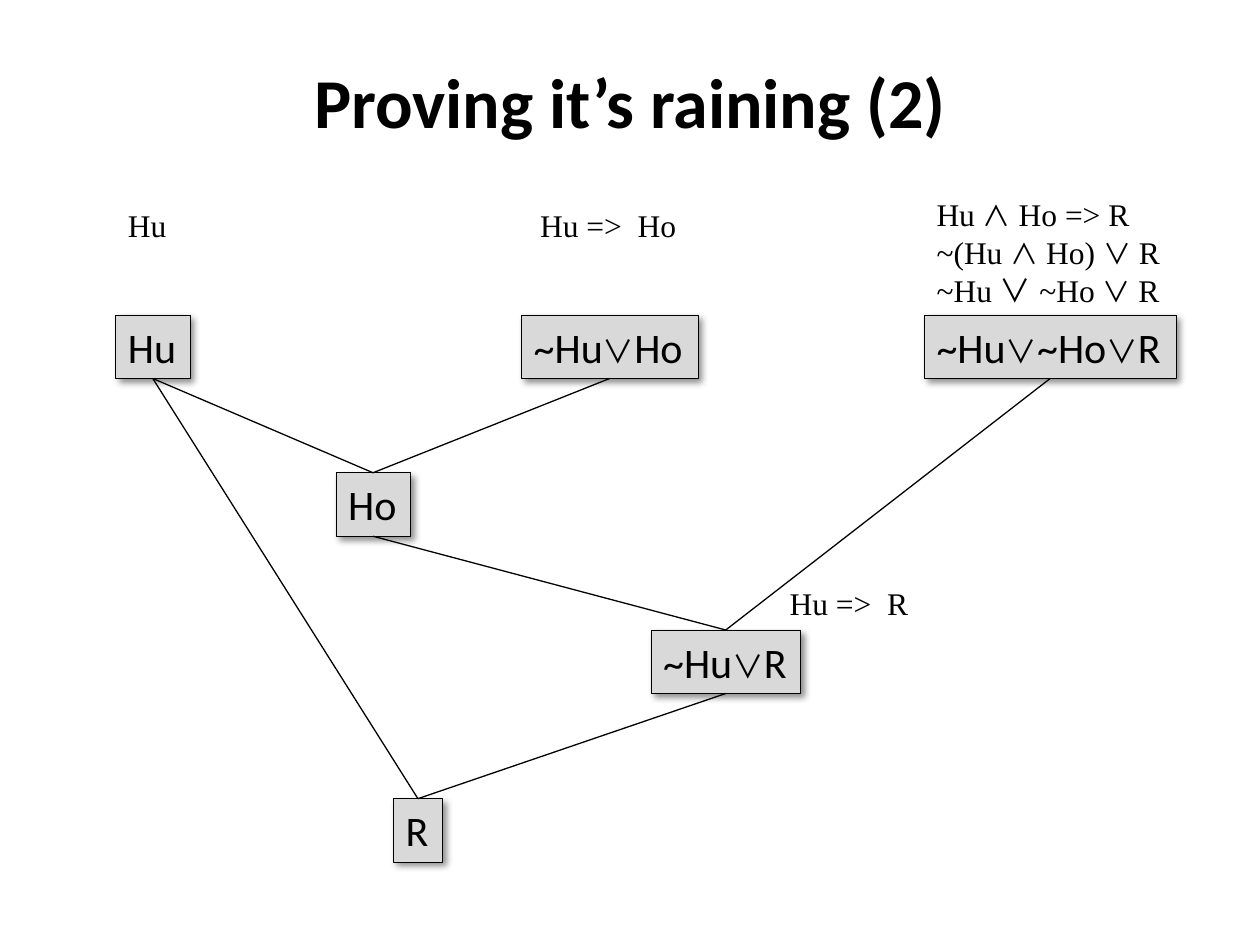
from dataclasses import dataclass
from itertools import groupby

from lxml.etree import SubElement
from pptx import Presentation
from pptx.dml.color import RGBColor
from pptx.enum.shapes import MSO_CONNECTOR as Connector, MSO_SHAPE as Shape
from pptx.enum.text import MSO_ANCHOR as Anchor, MSO_AUTO_SIZE as AutoSize, PP_ALIGN as Align
from pptx.oxml.ns import qn
from pptx.util import Cm, Pt

BLACK, GREY = "000000", "D9D9D9"
SYMBOLS = "∧∨"
SYMBOL_FONT = "Noto Sans CJK JP"
BOX_HEIGHT = 1.28
TOP_SITE, BOTTOM_SITE = 0, 2


@dataclass
class Clause:
    text: str
    left: float
    top: float
    width: float


@dataclass
class Note:
    paragraphs: tuple[str, ...]
    left: float
    top: float
    width: float
    height: float = 1.02
    wrap: bool = False
    symbol_sizes: tuple[int, ...] = ()


CLAUSES = {
    "Hu": Clause("Hu", 2.33, 6.35, 1.5),
    "Hu=>Ho": Clause("~Hu∨Ho", 10.51, 6.35, 3.56),
    "Hu&Ho=>R": Clause("~Hu∨~Ho∨R", 18.63, 6.35, 5.08),
    "Ho": Clause("Ho", 6.77, 9.53, 1.5),
    "Hu=>R": Clause("~Hu∨R", 13.12, 12.7, 3.02),
    "R": Clause("R", 7.93, 16.1, 0.99),
}
RESOLUTIONS = [
    ("Hu", "Ho"), ("Hu=>Ho", "Ho"),
    ("Hu&Ho=>R", "Hu=>R"), ("Ho", "Hu=>R"),
    ("Hu=>R", "R"), ("Hu", "R"),
]
NOTES = [
    Note(("Hu",), 2.33, 4.02, 1.3),
    Note(("Hu =>  Ho",), 10.64, 4.02, 3.28),
    Note(("Hu ∧ Ho => R", "~(Hu ∧ Ho) ∨ R\v~Hu ∨ ~Ho ∨ R"),
         18.63, 3.81, 5.97, 2.57, True, (16, 16, 16, 18, 16)),
    Note(("Hu =>  R",), 15.67, 11.64, 2.97),
]


def rgb(color: str) -> RGBColor:
    return RGBColor.from_string(color)


def add_run(p, text: str, font: str, size: int) -> None:
    r = p.add_run()
    r.text = text
    r.font.name, r.font.size = font, Pt(size)
    r.font.color.rgb = rgb(BLACK)
    if font == SYMBOL_FONT:
        SubElement(r.font._element, qn("a:ea"), typeface=font)


def write(tf, paragraphs, font: str, size: int, symbol_sizes, wrap: bool = False) -> None:
    """Write formulas, giving logic symbols their own font and sizes."""
    tf.word_wrap = wrap
    tf.auto_size = AutoSize.SHAPE_TO_FIT_TEXT
    tf.vertical_anchor = Anchor.TOP
    sizes = iter(symbol_sizes)
    for i, text in enumerate(paragraphs):
        p = tf.add_paragraph() if i else tf.paragraphs[0]
        p.alignment = Align.LEFT
        for special, chars in groupby(text, lambda c: c if c in SYMBOLS + "\v" else ""):
            if special == "\v":
                p.add_line_break()
            elif special:
                add_run(p, special, SYMBOL_FONT, next(sizes))
            else:
                add_run(p, "".join(chars), font, size)


def add_shadow(sp) -> None:
    effects = SubElement(sp._element.spPr, qn("a:effectLst"))
    shadow = SubElement(effects, qn("a:outerShdw"), blurRad=str(Pt(4)), dist=str(Pt(3)),
                        dir=str(45 * 60000), algn="tl", rotWithShape="0")
    color = SubElement(shadow, qn("a:srgbClr"), val=BLACK)
    SubElement(color, qn("a:alpha"), val="43000")


def add_clause(slide, clause: Clause):
    sp = slide.shapes.add_shape(Shape.RECTANGLE, Cm(clause.left), Cm(clause.top),
                                Cm(clause.width), Cm(BOX_HEIGHT))
    sp.fill.solid()
    sp.fill.fore_color.rgb = rgb(GREY)
    sp.line.color.rgb = rgb(BLACK)
    sp.line.width = Pt(0.25)
    add_shadow(sp)
    write(sp.text_frame, (clause.text,), "Calibri", 24, [18] * clause.text.count("∨"))
    return sp


def add_note(slide, note: Note) -> None:
    sp = slide.shapes.add_textbox(Cm(note.left), Cm(note.top), Cm(note.width), Cm(note.height))
    write(sp.text_frame, note.paragraphs, "Times New Roman", 18, note.symbol_sizes, note.wrap)


def add_resolution(slide, parent, child) -> None:
    line = slide.shapes.add_connector(Connector.STRAIGHT, 0, 0, 0, 0)
    line.begin_connect(parent, BOTTOM_SITE)
    line.end_connect(child, TOP_SITE)
    line.line.color.rgb = rgb(BLACK)
    line.line.width = Pt(0.75)
    SubElement(line._element.spPr, qn("a:effectLst"))


def add_title(slide, text: str) -> None:
    sp = slide.shapes.title
    sp.left, sp.top, sp.width, sp.height = Cm(1.9), Cm(0.43), Cm(21.6), Cm(3.18)
    tf = sp.text_frame
    tf.text = text
    tf.vertical_anchor = Anchor.MIDDLE
    p = tf.paragraphs[0]
    p.alignment = Align.CENTER
    font = p.runs[0].font
    font.name, font.size, font.bold = "Calibri", Pt(40), True
    font.color.rgb = rgb(BLACK)


def main() -> None:
    prs = Presentation()
    prs.slide_width, prs.slide_height = Cm(25.4), Cm(19.05)
    slide = prs.slides.add_slide(prs.slide_layouts[5])
    add_title(slide, "Proving it’s raining (2)")
    boxes = {name: add_clause(slide, clause) for name, clause in CLAUSES.items()}
    for note in NOTES:
        add_note(slide, note)
    for parent, child in RESOLUTIONS:
        add_resolution(slide, boxes[parent], boxes[child])
    prs.save("out.pptx")


if __name__ == "__main__":
    main()
